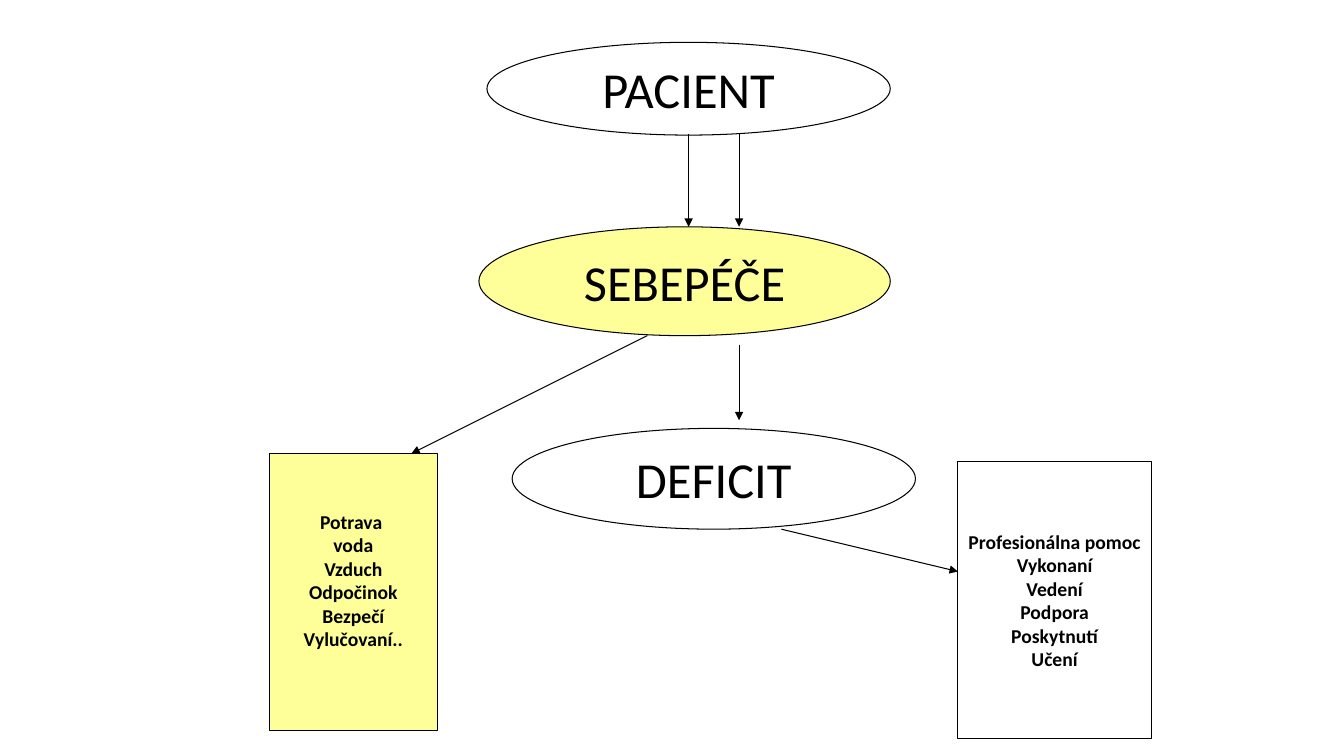
from dataclasses import dataclass

from lxml import etree
from pptx import Presentation
from pptx.dml.color import RGBColor
from pptx.enum.shapes import MSO_CONNECTOR, MSO_SHAPE
from pptx.enum.text import MSO_ANCHOR, PP_ALIGN
from pptx.oxml.ns import qn
from pptx.util import Inches, Pt

OVAL = MSO_SHAPE.OVAL
RECT = MSO_SHAPE.RECTANGLE
STRAIGHT = MSO_CONNECTOR.STRAIGHT
MIDDLE = MSO_ANCHOR.MIDDLE
CENTER = PP_ALIGN.CENTER


@dataclass(frozen=True)
class Theme:
    ink: RGBColor = RGBColor(0, 0, 0)
    white: RGBColor = RGBColor(255, 255, 255)
    yellow: RGBColor = RGBColor(0xFF, 0xFF, 0x99)
    font: str = "Calibri"
    large: int = 36
    small: int = 14
    line: float = 0.75


THEME = Theme()


def write(shape, lines, size=THEME.small, bold=False, base=0.05):
    frame = shape.text_frame
    frame.word_wrap = False
    frame.vertical_anchor = MIDDLE
    frame.margin_bottom = Inches(base)
    for index, line in enumerate(lines):
        para = frame.paragraphs[0] if index == 0 else frame.add_paragraph()
        para.alignment = CENTER
        run = para.add_run()
        run.text = line
        run.font.name = THEME.font
        run.font.size = Pt(size)
        run.font.bold = bold
        run.font.color.rgb = THEME.ink


def add_box(slide, kind, place, fill):
    shape = slide.shapes.add_shape(kind, *map(Inches, place))
    shape.shadow.inherit = False
    shape.fill.solid()
    shape.fill.fore_color.rgb = fill
    shape.line.color.rgb = THEME.ink
    shape.line.width = Pt(THEME.line)
    return shape


def add_oval(slide, label, place, fill=THEME.white):
    write(add_box(slide, OVAL, place, fill), [label], size=THEME.large)


def add_list(slide, lines, place, fill=THEME.white, base=0.05):
    write(add_box(slide, RECT, place, fill), lines, bold=True, base=base)


def add_arrow(slide, start, end):
    arrow = slide.shapes.add_connector(STRAIGHT, *map(Inches, start + end))
    arrow.line.color.rgb = THEME.ink
    arrow.line.width = Pt(THEME.line)
    stroke = arrow.line._get_or_add_ln()
    etree.SubElement(stroke, qn("a:tailEnd"), type="triangle")
    etree.SubElement(arrow._element.spPr, qn("a:effectLst"))


def main():
    deck = Presentation()
    deck.slide_width = Inches(13.33)
    deck.slide_height = Inches(7.5)
    slide = deck.slides.add_slide(deck.slide_layouts[6])

    add_oval(slide, "PACIENT", (4.83, 0.42, 4, 0.92))
    add_oval(slide, "SEBEPÉČE", (4.75, 2.25, 4.08, 1.08), THEME.yellow)
    add_oval(slide, "DEFICIT", (5.08, 4.25, 4, 1))

    needs = ["Potrava ", "voda", "Vzduch", "Odpočinok", "Bezpečí", "Vylučovaní.."]
    add_list(slide, needs, (2.67, 4.5, 1.67, 2.75), THEME.yellow, base=0.29)
    help_list = ["Profesionálna pomoc", "Vykonaní", "Vedení", "Podpora",
                 "Poskytnutí", "Učení"]
    add_list(slide, help_list, (9.5, 4.58, 1.92, 2.75))

    for start, end in (
        ((6.83, 1.33), (6.83, 2.25)),
        ((7.33, 1.33), (7.33, 2.25)),
        ((7.33, 3.42), (7.33, 4.17)),
        ((6.42, 3.33), (4.08, 4.5)),
        ((7.75, 5.25), (9.5, 5.67)),
    ):
        add_arrow(slide, start, end)

    deck.save("out.pptx")


if __name__ == "__main__":
    main()
